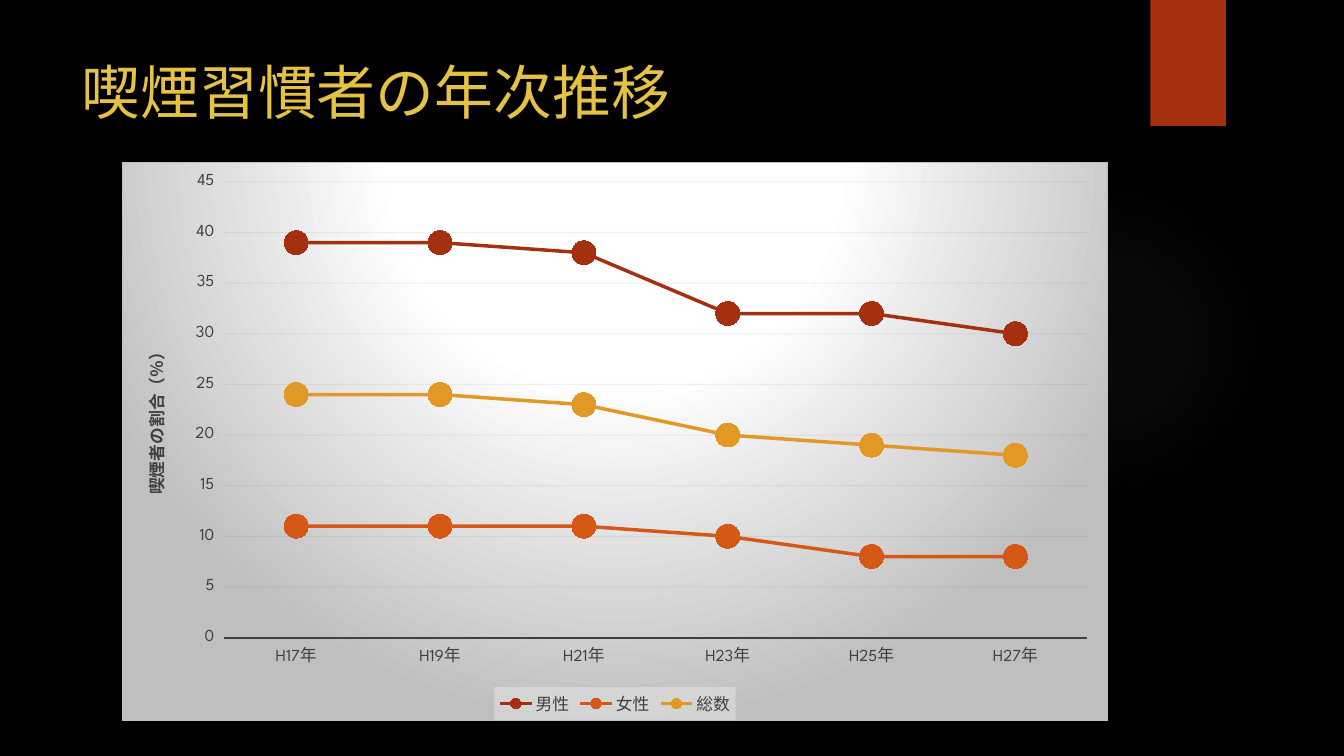
from lxml import etree
from pptx import Presentation
from pptx.chart.data import CategoryChartData
from pptx.dml.color import RGBColor
from pptx.enum.chart import (XL_CHART_TYPE as ChartType, XL_LEGEND_POSITION as LegendPosition,
                             XL_MARKER_STYLE as MarkerStyle, XL_TICK_MARK as TickMark)
from pptx.enum.shapes import MSO_SHAPE as Preset
from pptx.enum.text import MSO_ANCHOR as Anchor, PP_ALIGN as Align
from pptx.oxml.ns import nsdecls, qn
from pptx.util import Inches, Pt

# Content
TITLE = "喫煙習慣者の年次推移"
AXIS_TITLE = "喫煙者の割合（％）"
YEARS = [f"H{year}年" for year in range(17, 28, 2)]
SMOKERS = [
    ("男性", "A5300F", (39, 39, 38, 32, 32, 30)),
    ("女性", "D55816", (11, 11, 11, 10, 8, 8)),
    ("総数", "E19825", (24, 24, 23, 20, 19, 18)),
]

# Places in inches: left, top, width, height
SLIDE_SIZE = (13.33, 7.5)
GLOW_BOX = (9.41, 1.83, 3.08, 3.08)
TAB_BOX = (11.41, 0, 0.75, 1.25)
TITLE_BOX = (0.71, 0.5, 10.29, 1.53)
CHART_BOX = (1.21, 1.61, 9.78, 5.54)

# Places in inches from the chart's corner
PLOT_PLACE = {"x": 1.01, "y": 0.19, "w": 8.57, "h": 4.53}
AXIS_TITLE_PLACE = {"x": 0.16, "y": 1.77}

FONT = "League Spartan"
INK = "404040"
FRAME = "BFBFBF"


def color(value):
    return RGBColor.from_string(value)


def inches(box):
    return [Inches(length) for length in box]


def set_font(font, size, value, **extra):
    for name, setting in {"size": Pt(size), "name": FONT, **extra}.items():
        setattr(font, name, setting)
    font.color.rgb = color(value)


def set_line(line, value, width):
    line.color.rgb = color(value)
    line.width = Pt(width)


def radial_fill(stops, focus):
    """Circular gradient; stops are (position %, colour, opacity %)."""
    marks = "".join(
        f'<a:gs pos="{position * 1000}"><a:srgbClr val="{value}">'
        f'<a:alpha val="{opacity * 1000}"/></a:srgbClr></a:gs>'
        for position, value, opacity in stops)
    edges = " ".join(f'{side}="{share * 1000}"' for side, share in zip("ltrb", focus))
    return etree.fromstring(
        f'<a:gradFill {nsdecls("a")} rotWithShape="1"><a:gsLst>{marks}</a:gsLst>'
        f'<a:path path="circle"><a:fillToRect {edges}/></a:path></a:gradFill>')


def set_layout(parent, index, place, target=""):
    """Fix a chart part; lengths become shares of the chart's size."""
    for old in parent.findall(qn("c:layout")):
        parent.remove(old)
    width, height = CHART_BOX[2:]
    whole = {"x": width, "w": width, "y": height, "h": height}
    modes = "".join(f'<c:{key}Mode val="edge"/>' for key in place if key in "xy")
    values = "".join(f'<c:{key} val="{length / whole[key]:.4f}"/>'
                     for key, length in place.items())
    parent.insert(index, etree.fromstring(
        f'<c:layout {nsdecls("c")}><c:manualLayout>{target}{modes}{values}'
        '</c:manualLayout></c:layout>'))


def add_plain_shape(slide, preset, box, value):
    shape = slide.shapes.add_shape(preset, *inches(box))
    shape.shadow.inherit = False
    shape.fill.solid()
    shape.fill.fore_color.rgb = color(value)
    shape.line.fill.background()
    return shape


def add_backdrop(slide):
    slide.background.fill.solid()
    slide.background.fill.fore_color.rgb = color("000000")
    glow = add_plain_shape(slide, Preset.OVAL, GLOW_BOX, "848484")
    solid = glow._element.spPr.find(qn("a:solidFill"))
    stops = [(0, "848484", 7), (36, "848484", 6), (69, "848484", 0)]
    glow._element.spPr.replace(solid, radial_fill(stops, (50, 50, 50, 50)))
    add_plain_shape(slide, Preset.RECTANGLE, TAB_BOX, "A5300F")


def add_title(slide):
    title = slide.shapes.title
    title.left, title.top, title.width, title.height = inches(TITLE_BOX)
    title.text_frame.text = TITLE
    title.text_frame.vertical_anchor = Anchor.TOP
    paragraph = title.text_frame.paragraphs[0]
    paragraph.alignment = Align.LEFT
    set_font(paragraph.runs[0].font, 42, "E5C243")


def format_axes(chart):
    years, share = chart.category_axis, chart.value_axis
    for axis in (years, share):
        set_font(axis.tick_labels.font, 12, INK)
    years.major_tick_mark = TickMark.NONE
    set_line(years.format.line, INK, 1.5)

    limits = {"minimum_scale": 0, "maximum_scale": 45, "major_unit": 5,
              "major_tick_mark": TickMark.OUTSIDE, "has_major_gridlines": True}
    for name, setting in limits.items():
        setattr(share, name, setting)
    share.tick_labels.number_format = "General"
    share.tick_labels.number_format_is_linked = False
    share.format.line.fill.background()
    set_line(share.major_gridlines.format.line, "0D0D0D", 0.75)
    grid = share._element.find(qn("c:majorGridlines"))
    etree.SubElement(next(grid.iter(qn("a:srgbClr"))), qn("a:alpha"), val="6000")

    # Turned axis title
    frame = share.axis_title.text_frame
    frame.text = AXIS_TITLE
    set_font(frame.paragraphs[0].runs[0].font, 12, INK, bold=True)
    frame._txBody.bodyPr.set("rot", "-5400000")
    frame._txBody.bodyPr.set("vert", "horz")
    set_layout(share._element.find(qn("c:title")), 1, AXIS_TITLE_PLACE)


def add_chart(slide):
    data = CategoryChartData(number_format="General")
    data.categories = YEARS
    for name, _, values in SMOKERS:
        data.add_series(name, values)
    chart = slide.shapes.add_chart(ChartType.LINE_MARKERS, *inches(CHART_BOX), data).chart
    chart.has_title = False
    set_font(chart.font, 10, "FFFFFF")
    format_axes(chart)

    # Lines and markers
    plot = chart.plots[0]
    plot.vary_by_categories = False
    for series, (_, value, _) in zip(plot.series, SMOKERS):
        series.smooth = False
        set_line(series.format.line, value, 2.5)
        series.marker.style = MarkerStyle.CIRCLE
        series.marker.size = 17
        series.marker.format.fill.solid()
        series.marker.format.fill.fore_color.rgb = color(value)
        set_line(series.marker.format.line, value, 0.75)

    # Legend on a pale panel
    chart.has_legend = True
    chart.legend.position = LegendPosition.BOTTOM
    chart.legend.include_in_layout = False
    set_font(chart.legend.font, 12, INK)
    chart.legend._element.find(qn("c:txPr")).addprevious(etree.fromstring(
        f'<c:spPr {nsdecls("c", "a")}><a:solidFill><a:srgbClr val="F2F2F2">'
        '<a:alpha val="39000"/></a:srgbClr></a:solidFill></c:spPr>'))

    # Plot place and chart frame
    space = chart._chartSpace
    set_layout(next(space.iter(qn("c:plotArea"))), 0, PLOT_PLACE,
               '<c:layoutTarget val="inner"/>')
    frame = etree.fromstring(
        f'<c:spPr {nsdecls("c", "a")}><a:ln w="{Pt(0.75)}"><a:solidFill>'
        f'<a:srgbClr val="{FRAME}"/></a:solidFill></a:ln></c:spPr>')
    stops = [(0, "FFFFFF", 100), (39, "FFFFFF", 100), (100, FRAME, 100)]
    frame.insert(0, radial_fill(stops, (50, -80, 50, 180)))
    space.find(qn("c:chart")).addnext(frame)


def main():
    presentation = Presentation()
    presentation.slide_width, presentation.slide_height = inches(SLIDE_SIZE)
    slide = presentation.slides.add_slide(presentation.slide_layouts[5])
    add_backdrop(slide)
    add_title(slide)
    add_chart(slide)
    presentation.save("out.pptx")


if __name__ == "__main__":
    main()
